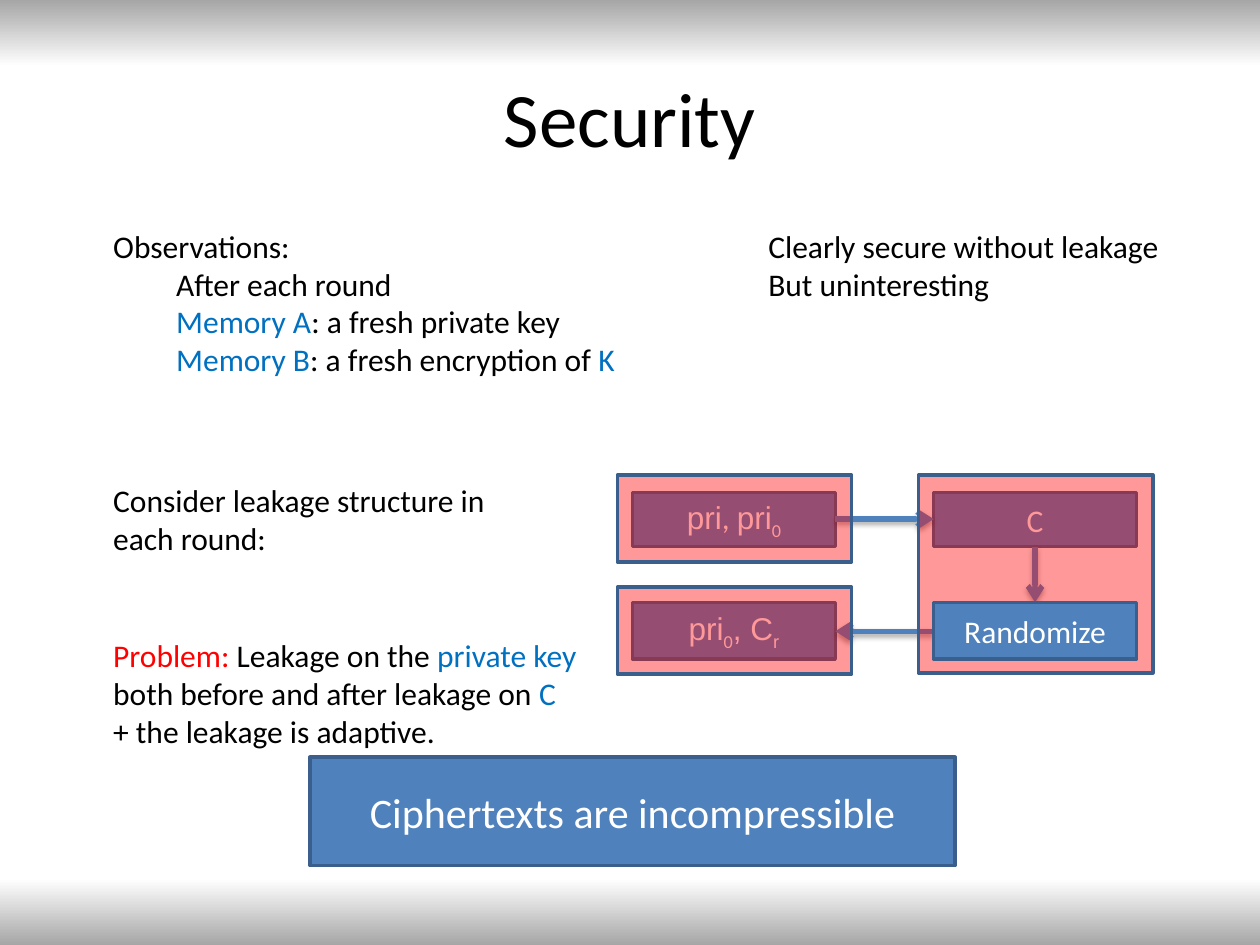
from copy import deepcopy

from lxml import etree
from pptx import Presentation
from pptx.dml.color import RGBColor
from pptx.enum.shapes import MSO_CONNECTOR as Connector, MSO_SHAPE as Shape
from pptx.enum.text import MSO_ANCHOR as Anchor, MSO_AUTO_SIZE as AutoSize, PP_ALIGN as Align
from pptx.oxml import parse_xml
from pptx.oxml.ns import nsdecls, qn
from pptx.util import Inches, Pt

SHADOW = (
    f'<a:effectLst {nsdecls("a")}><a:outerShdw blurRad="40000" dist="23000" dir="5400000" '
    'rotWithShape="0"><a:srgbClr val="000000"><a:alpha val="35000"/></a:srgbClr>'
    '</a:outerShdw></a:effectLst>'
)


def rgb(value):
    return RGBColor.from_string(value)


def write(frame, paragraphs, size=18, color="000000", font="Calibri", align=Align.LEFT,
          anchor=Anchor.TOP, indents=()):
    frame.vertical_anchor = anchor
    for index, runs in enumerate(paragraphs):
        paragraph = frame.paragraphs[0] if index == 0 else frame.add_paragraph()
        paragraph.alignment = align
        if index in indents:
            paragraph.level = 1
            properties = paragraph._p.get_or_add_pPr()
            properties.set("marL", str(Inches(0.5)))
            properties.set("indent", "0")
        for text, look in runs:
            run = paragraph.add_run()
            run.text = text
            run.font.size = Pt(size)
            run.font.name = look.get("font", font)
            run.font.color.rgb = rgb(look.get("color", color))
            if look.get("subscript"):
                run._r.get_or_add_rPr().set("baseline", "-25000")


class SlideBuilder:
    blue = "4F81BD"
    outline = "3A5F8C"
    leak = "FF0000"

    def __init__(self, slide):
        self.slide = slide

    def background(self, stops):
        fill = self.slide.background.fill
        fill.gradient()
        fill.gradient_angle = 270
        stop_list = self.slide.element.find(".//" + qn("a:gsLst"))
        while len(stop_list) < len(stops):
            stop_list.append(deepcopy(stop_list[0]))
        for stop, (position, color) in zip(fill.gradient_stops, stops):
            stop.position = position
            stop.color.rgb = rgb(color)

    def title(self, text, left, top, width, height):
        title = self.slide.shapes.title
        title.left, title.top = Inches(left), Inches(top)
        title.width, title.height = Inches(width), Inches(height)
        write(title.text_frame, [[(text, {})]], size=44, align=Align.CENTER, anchor=Anchor.MIDDLE)

    def text(self, paragraphs, left, top, width, height, wrap=False, indents=()):
        box = self.slide.shapes.add_textbox(
            Inches(left), Inches(top), Inches(width), Inches(height))
        box.text_frame.word_wrap = wrap
        box.text_frame.auto_size = AutoSize.SHAPE_TO_FIT_TEXT
        write(box.text_frame, paragraphs, indents=indents)

    def box(self, left, top, width, height, runs=(), size=18, fill=blue, alpha=None):
        box = self.slide.shapes.add_shape(
            Shape.RECTANGLE, Inches(left), Inches(top), Inches(width), Inches(height))
        box.shadow.inherit = False
        box.fill.solid()
        box.fill.fore_color.rgb = rgb(fill)
        if alpha is not None:
            color = box._element.spPr.find(qn("a:solidFill")).find(qn("a:srgbClr"))
            etree.SubElement(color, qn("a:alpha"), val=str(alpha * 1000))
        box.line.color.rgb = rgb(self.outline)
        box.line.width = Pt(2)
        if runs:
            write(box.text_frame, [runs], size=size, color="FFFFFF",
                  align=Align.CENTER, anchor=Anchor.MIDDLE)

    def leakage(self, left, top, height):
        self.box(left, top, 1.86, height, fill=self.leak, alpha=40)

    def arrow(self, start, end):
        arrow = self.slide.shapes.add_connector(
            Connector.STRAIGHT, *(Inches(value) for value in (*start, *end)))
        arrow.line.color.rgb = rgb(self.blue)
        arrow.line.width = Pt(3)
        etree.SubElement(arrow.line._get_or_add_ln(), qn("a:tailEnd"), type="arrow")
        arrow._element.spPr.append(parse_xml(SHADOW))


def main():
    presentation = Presentation()
    presentation.slide_width, presentation.slide_height = Inches(10), Inches(7.5)
    builder = SlideBuilder(presentation.slides.add_slide(presentation.slide_layouts[5]))
    builder.background([(0, "A6A6A6"), (0.07, "FFFFFF"), (0.93, "FFFFFF"), (1, "A6A6A6")])
    builder.title("Security", 0.5, 0.3, 9, 1.25)

    plain, term, problem = {}, {"color": "0070C0"}, {"color": "FF0000"}
    arial, subscript = {"font": "Arial"}, {"subscript": True}
    arial_subscript = {**arial, **subscript}
    margin = 0.8

    builder.text([
        [("Observations:", plain)],
        [("After each round", plain)],
        [("Memory A", term), (": a fresh private key", plain)],
        [("Memory B", term), (": a fresh encryption of ", plain), ("K", term)],
    ], margin, 1.75, 4.91, 1.31, wrap=True, indents=(1, 2, 3))
    builder.text([
        [("Clearly secure without leakage", plain)],
        [("But uninteresting", plain)],
    ], 6, 1.75, 3.34, 0.71)
    builder.text([
        [("Consider leakage structure in", plain)],
        [("each round:", plain)],
    ], margin, 3.77, 3.19, 0.71)

    memory_a, memory_b, step_width = 5.02, 7.41, 1.61
    first_row, first_height = 3.91, 0.43
    second_row, second_height = 4.78, 0.45
    memory_a_right = memory_a + step_width
    memory_b_center = memory_b + step_width / 2
    send_y, reply_y = 4.12, 5.01

    builder.box(memory_b, first_row, step_width, first_height, [("C", plain)])
    builder.arrow((memory_b_center, first_row + first_height), (memory_b_center, second_row))
    builder.box(memory_a, first_row, step_width, first_height,
                [("pri", arial), (", ", plain), ("pri", arial), ("0", subscript)])
    builder.box(memory_a, second_row, step_width, second_height,
                [("pri", arial), ("0", subscript), (", C", arial), ("r", arial_subscript)])
    builder.arrow((memory_a_right, send_y), (memory_b, send_y))
    builder.arrow((memory_b, reply_y), (memory_a_right, reply_y))

    pad = 0.12
    for top in (3.77, 4.66):
        builder.leakage(memory_a - pad, top, 0.69)
    builder.text([
        [("Problem:", problem), (" Leakage on the ", plain), ("private key", term)],
        [("both before and after leakage on ", plain), ("C", term)],
        [("+ the leakage is adaptive.", plain)],
    ], margin, 5, 3.92, 1.01)
    builder.leakage(memory_b - pad, 3.77, 1.57)
    builder.box(memory_b, second_row, step_width, second_height, [("Randomize", plain)])
    builder.box(2.46, 6.01, 5.12, 0.86, [("Ciphertexts are incompressible", plain)], size=24)

    presentation.save("out.pptx")


if __name__ == "__main__":
    main()
